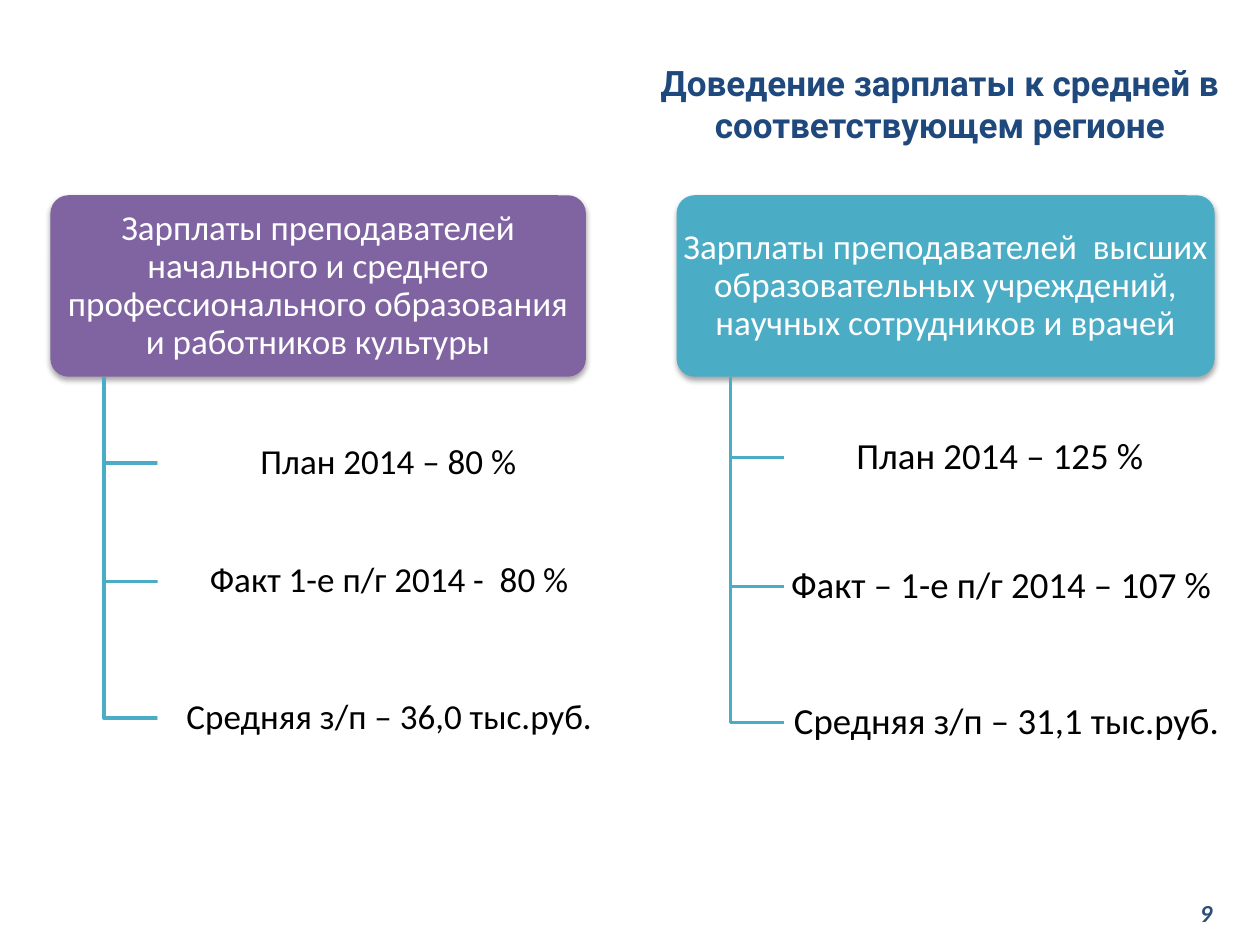
"""Build the slide on bringing salaries to the regional average."""
from lxml.etree import SubElement
from pptx import Presentation
from pptx.dml.color import RGBColor as RGB
from pptx.enum.shapes import MSO_SHAPE as Shape
from pptx.enum.text import MSO_ANCHOR as Anchor, PP_ALIGN as Align
from pptx.oxml.ns import qn
from pptx.util import Inches, Pt

WHITE = RGB(0xFF, 0xFF, 0xFF)
BLACK = RGB(0, 0, 0)
PURPLE = RGB(0x80, 0x64, 0xA2)
TEAL = RGB(0x4B, 0xAC, 0xC6)
NAVY = RGB(0x1F, 0x49, 0x7D)
SLATE = RGB(0x2D, 0x4E, 0x77)
TOP, HIGH = 1.55, 1.44


def write(frame, text, size, color, font="Calibri", align=Align.CENTER, anchor=Anchor.MIDDLE):
    frame.word_wrap = True
    frame.vertical_anchor = anchor
    para = frame.paragraphs[0]
    para.alignment = align
    run = para.add_run()
    run.text = text
    run.font.name = font
    run.font.size = Pt(size)
    run.font.color.rgb = color
    return para, run


def card(left, top, wide, high, fill, text, size, color):
    box = slide.shapes.add_shape(
        Shape.ROUNDED_RECTANGLE, Inches(left), Inches(top), Inches(wide), Inches(high))
    box.adjustments[0] = 0.1
    box.shadow.inherit = False
    box.fill.solid()
    box.fill.fore_color.rgb = fill
    box.line.fill.background()
    frame = box.text_frame
    frame.margin_left = frame.margin_right = frame.margin_top = frame.margin_bottom = 0
    para, run = write(frame, text, size, color)
    para.line_spacing = 0.9
    return box


deck = Presentation()
deck.slide_width, deck.slide_height = Inches(10), Inches(7.5)
slide = deck.slides.add_slide(deck.slide_layouts[5])

title = slide.shapes.title
title.left, title.top = Inches(4.92), Inches(0.44)
title.width, title.height = Inches(5.08), Inches(0.79)
para, run = write(title.text_frame, "Доведение зарплаты к средней в соответствующем регионе",
                  20, NAVY, "Roboto", anchor=Anchor.TOP)
run.font.bold = True

trees = [
    (0.4, 4.25, PURPLE, 20,
     "Зарплаты преподавателей начального и среднего профессионального образования "
     "и работников культуры",
     [(3.34, 3.73, 0.67, "План 2014 – 80 % "),
      (4.38, 3.68, 0.47, "Факт 1-е п/г 2014 -  80 %"),
      (5.21, 3.68, 0.98, "Средняя з/п – 36,0 тыс.руб.")]),
    (5.37, 4.27, TEAL, 21,
     "Зарплаты преподавателей  высших образовательных учреждений, "
     "научных сотрудников и врачей",
     [(3.34, 3.49, 0.58, "План 2014 – 125 % "),
      (4.28, 3.51, 0.75, "Факт – 1-е п/г 2014 – 107 % "),
      (5.4, 3.53, 0.67, "Средняя з/п – 31,1 тыс.руб.")]),
]

for left, wide, fill, size, head, items in trees:
    box = card(left, TOP, wide, HIGH, fill, head, 20, WHITE)
    glow = SubElement(box._element.spPr.find(qn("a:effectLst")), qn("a:outerShdw"),
                      blurRad=str(Pt(3.15)), dist=str(Pt(1.8)), dir="5400000", rotWithShape="0")
    tint = SubElement(glow, qn("a:srgbClr"), val="000000")
    SubElement(tint, qn("a:alpha"), val="35000")

    stem, edge = Inches(left + wide * 0.1), Inches(left + wide * 0.2)
    for top, span, high, text in items:
        mid = Inches(top + high / 2)
        path = slide.shapes.build_freeform(stem, Inches(TOP + HIGH))
        path.add_line_segments([(stem, mid), (edge, mid)], close=False)
        branch = path.convert_to_shape()
        branch.shadow.inherit = False
        branch.fill.background()
        branch.line.color.rgb = TEAL
        branch.line.width = Pt(2)

        leaf = card(left + wide * 0.2, top, span, high, WHITE, text, size, BLACK)
        tint = leaf._element.spPr.find(qn("a:solidFill"))[0]
        SubElement(tint, qn("a:alpha"), val="90000")

page = slide.shapes.add_textbox(Inches(7.22), Inches(6.98), Inches(2.5), Inches(0.52))
para, run = write(page.text_frame, "9", 14, SLATE, align=Align.RIGHT)
run.font.bold = run.font.italic = True

deck.save("out.pptx")
